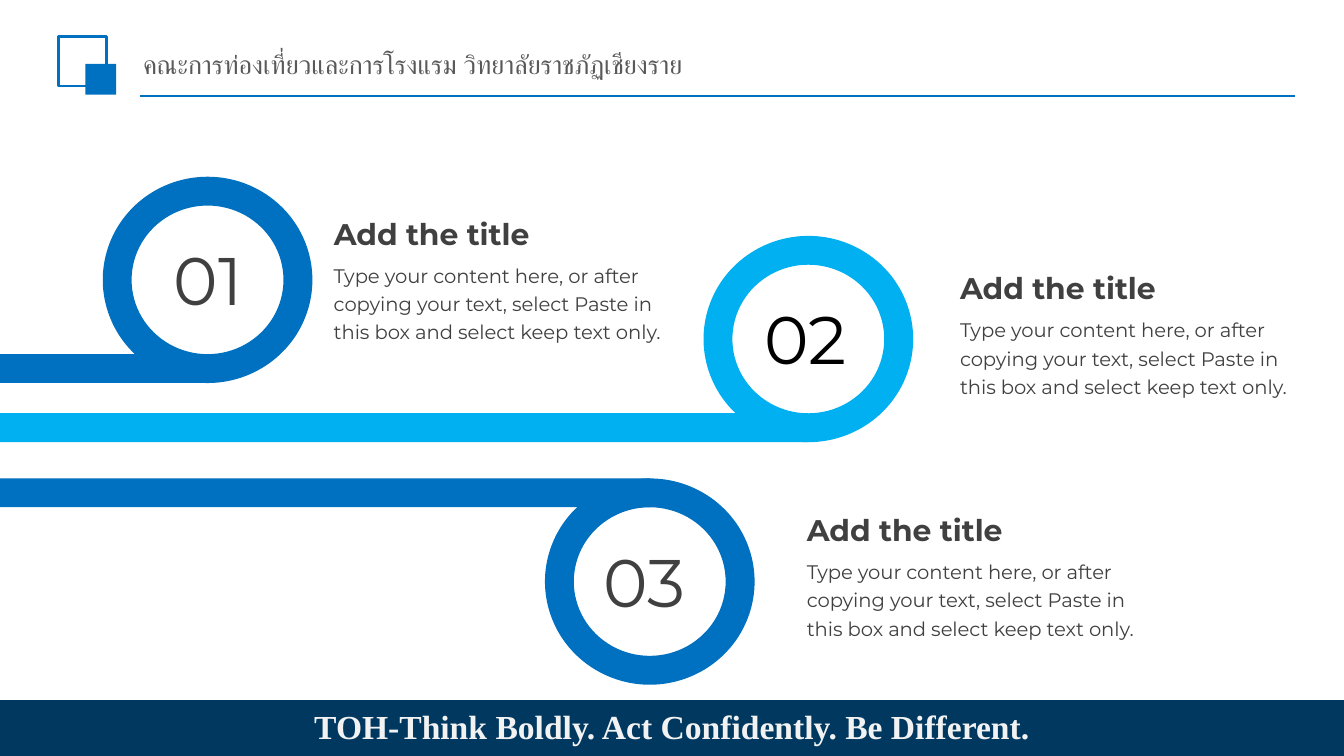
import dataclasses

import pptx
import pptx.dml.color
import pptx.enum.shapes
import pptx.enum.text
import pptx.util
import lxml.etree
import pptx.oxml.ns

PX = 4572
SHAPE = pptx.enum.shapes.MSO_SHAPE
ALIGN = pptx.enum.text.PP_ALIGN
ANCHOR = pptx.enum.text.MSO_ANCHOR


@dataclasses.dataclass(frozen=True)
class Theme:
    blue: str = "0070C0"
    sky: str = "00B0F0"
    navy: str = "003860"
    pale: str = "F2F2F2"
    black: str = "000000"
    dark: str = "404040"
    grey: str = "595959"
    body_font: str = "Montserrat"
    title_font: str = "Arial"
    motto_font: str = "Times New Roman"
    number_size: float = 36
    motto_size: float = 18
    heading_size: float = 16
    title_size: float = 14
    body_size: float = 10.5


@dataclasses.dataclass(frozen=True)
class Step:
    number: str
    ring_left: int
    ring_top: int
    number_left: int
    number_width: int
    content_left: int
    content_top: int
    color: str
    number_color: str
    rail_at_top: bool = False


THEME = Theme()
HEADING = "Add the title"
BODY = ("Type your content here, or after copying your text, "
        "select Paste in this box and select keep text only.")
STEPS = [
    Step("01", 153, 263, 43, 228, 477, 311, THEME.blue, THEME.dark),
    Step("02", 1047, 351, 34, 236, 1409, 392, THEME.sky, THEME.black),
    Step("03", 811, 712, 25, 246, 1181, 752, THEME.blue, THEME.dark, True),
]


def rgb(color):
    return pptx.dml.color.RGBColor.from_string(color)


def place(*lengths):
    return [length * PX for length in lengths]


def add_shape(slide, kind, box, fill=None, line=None):
    shape = slide.shapes.add_shape(kind, *place(*box))
    shape.shadow.inherit = False
    if fill:
        shape.fill.solid()
        shape.fill.fore_color.rgb = rgb(fill)
    else:
        shape.fill.background()
    if line:
        shape.line.color.rgb = rgb(line)
        shape.line.width = pptx.util.Pt(1.5)
    else:
        shape.line.fill.background()
    return shape


def write(shape, text, font, size, color, bold=False, align=ALIGN.LEFT,
          anchor=ANCHOR.TOP, spacing=None):
    frame = shape.text_frame
    frame.word_wrap = True
    frame.vertical_anchor = anchor
    paragraph = frame.paragraphs[0]
    paragraph.alignment = align
    paragraph.line_spacing = spacing
    run = paragraph.add_run()
    run.text = text
    run.font.name = font
    run.font.size = pptx.util.Pt(size)
    run.font.bold = bold
    run.font.color.rgb = rgb(color)


def add_text(slide, box, *arguments, **options):
    write(slide.shapes.add_textbox(*place(*box)), *arguments, **options)


def add_header(slide, left, top, width, height):
    rule = slide.shapes.add_connector(
        pptx.enum.shapes.MSO_CONNECTOR.STRAIGHT,
        *place(left + 121, top + height, left + width, top + height))
    rule.line.color.rgb = rgb(THEME.blue)
    rule.line.width = pptx.util.Pt(1.25)
    lxml.etree.SubElement(rule._element.spPr, pptx.oxml.ns.qn("a:effectLst"))
    add_shape(slide, SHAPE.RECTANGLE, (left, top, 72, 74), line=THEME.blue)
    add_shape(slide, SHAPE.RECTANGLE, (left + 40, top + 41, 46, 46), THEME.blue)

    title = slide.shapes.title
    title.left, title.top, title.width, title.height = place(left + 112, top + 5, 1290, 72)
    frame = title.text_frame
    frame.auto_size = pptx.enum.text.MSO_AUTO_SIZE.NONE
    frame.margin_left = frame.margin_right = 14 * PX
    frame.margin_top = frame.margin_bottom = 8 * PX
    write(title, "คณะการท่องเที่ยวและการโรงแรม วิทยาลัยราชภัฏเชียงราย",
          THEME.title_font, THEME.title_size, THEME.grey, anchor=ANCHOR.MIDDLE)


def add_ring(slide, step, left, top, width, height):
    rail_height = 43
    number = add_shape(slide, SHAPE.OVAL,
                       (left + step.number_left, top + 40, step.number_width, 224))
    write(number, step.number, THEME.body_font, THEME.number_size,
          step.number_color, align=ALIGN.CENTER, anchor=ANCHOR.MIDDLE)
    rail_top = top if step.rail_at_top else top + height - rail_height
    add_shape(slide, SHAPE.RECTANGLE,
              (0, rail_top, left + width // 2, rail_height), step.color)
    ring = add_shape(slide, SHAPE.DONUT, (left, top, width, height), step.color)
    ring.adjustments[0] = 0.14


def add_content(slide, left, top, width, height):
    heading_height = 74
    body_top = 65
    add_text(slide, (left, top + body_top, width, height - body_top), BODY,
             THEME.body_font, THEME.body_size, THEME.dark, spacing=1.2)
    add_text(slide, (left, top, 356, heading_height), HEADING,
             THEME.body_font, THEME.heading_size, THEME.dark, bold=True)


def add_footer(slide, left, top, width, height):
    add_shape(slide, SHAPE.RECTANGLE, (left, top, width, height), THEME.navy)
    add_text(slide, (left + 268, top - 10, width - 536, height + 21),
             "TOH-Think Boldly. Act Confidently. Be Different.",
             THEME.motto_font, THEME.motto_size, THEME.pale, bold=True,
             align=ALIGN.CENTER, anchor=ANCHOR.MIDDLE, spacing=0.9)


def main():
    presentation = pptx.Presentation()
    presentation.slide_width, presentation.slide_height = place(2000, 1125)
    slide = presentation.slides.add_slide(presentation.slide_layouts[5])
    add_header(slide, 87, 54, 1840, 89)
    add_footer(slide, 0, 1042, 2000, 83)
    for step in STEPS:
        add_ring(slide, step, step.ring_left, step.ring_top, 312, 307)
        add_content(slide, step.content_left, step.content_top, 540, 211)
    presentation.save("out.pptx")


if __name__ == "__main__":
    main()
